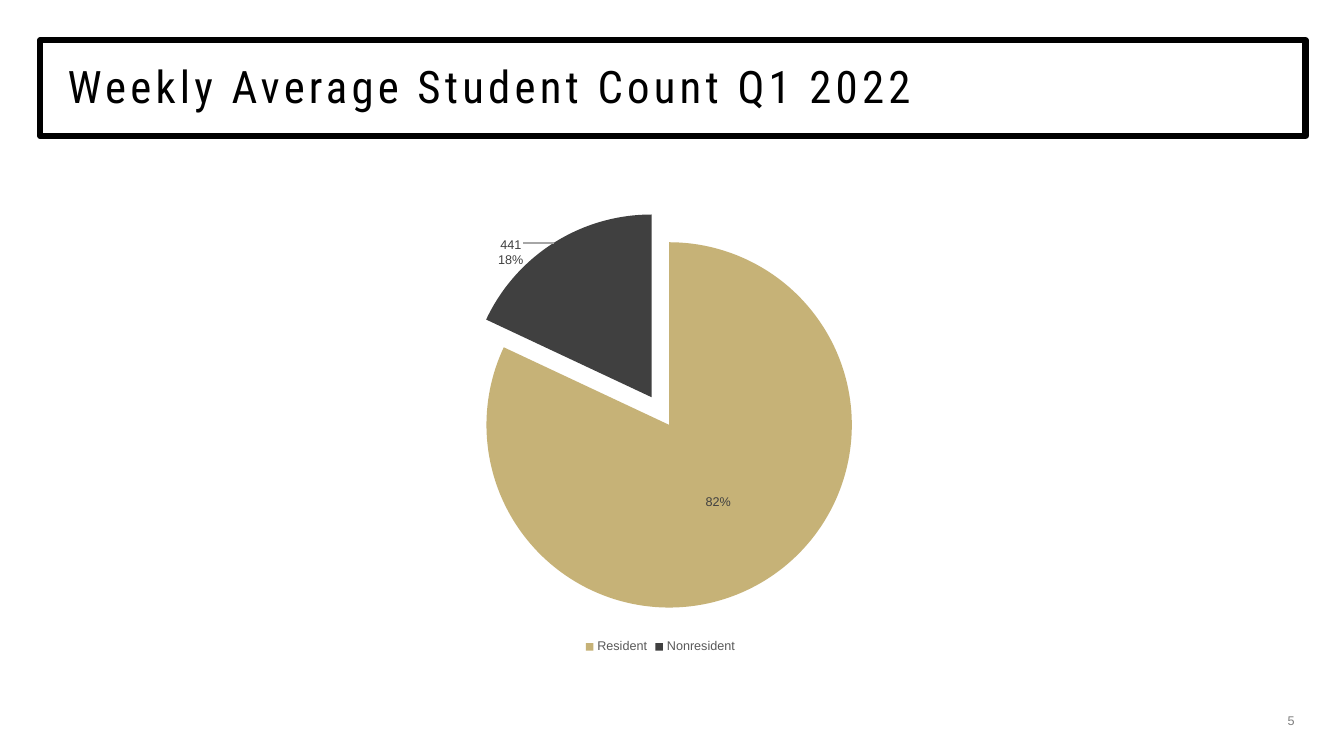
from lxml import etree
from pptx import Presentation
from pptx.chart.data import CategoryChartData as ChartData
from pptx.dml.color import RGBColor as RGB
from pptx.enum.chart import XL_CHART_TYPE as Kind
from pptx.enum.chart import XL_LABEL_POSITION as Spot
from pptx.enum.chart import XL_LEGEND_POSITION as Side
from pptx.enum.text import MSO_ANCHOR as Anchor
from pptx.enum.text import PP_ALIGN as Align
from pptx.oxml import parse_xml
from pptx.oxml.ns import nsdecls, qn
from pptx.util import Inches, Pt

COLORS = {"ink": "000000", "gold": "C6B277", "dark": "404040",
          "legend": "595959", "page": "7F7F7F", "leader": "A6A6A6"}


def color(name):
    return RGB.from_string(COLORS[name])


def style(font, size, name, face="Arial"):
    font.size = Pt(size)
    font.name = face
    font.color.rgb = color(name)


def write(slide, box, text):
    """Add a middle-anchored text box; return its frame and paragraph."""
    frame = slide.shapes.add_textbox(*map(Inches, box)).text_frame
    frame.word_wrap = True
    frame.vertical_anchor = Anchor.MIDDLE
    para = frame.paragraphs[0]
    para.text = text
    return frame, para


def add_title(slide, box, text):
    left, top, width, height = box
    rect = slide.shapes.add_shape(1, *map(Inches, box))
    rect.shadow.inherit = False
    rect.fill.background()
    rect.line.color.rgb = color("ink")
    rect.line.width = Pt(4.5)
    frame, para = write(slide, (left + 0.27, top + 0.01, width - 0.53, height), text)
    frame.margin_left = frame.margin_right = 0
    frame.margin_top = frame.margin_bottom = 0
    para.line_spacing = 0.9
    style(para.font, 32, "ink", "Roboto Condensed")
    para.runs[0].font._element.set("spc", "300")


def add_number(slide, box, text):
    para = write(slide, box, text)[1]
    para.alignment = Align.RIGHT
    style(para.font, 9, "page")


def layout(**values):
    """Make a manual chart layout from its settings, in order."""
    node = parse_xml(f"<c:layout {nsdecls('c')}><c:manualLayout/></c:layout>")
    for key, value in values.items():
        etree.SubElement(node[0], qn(f"c:{key}")).set("val", str(value))
    return node


def split(labels):
    """Put the value and the percentage on separate lines."""
    labels.find(qn("c:showPercent")).set("val", "1")
    mark = parse_xml(f"<c:separator {nsdecls('c')}>\n</c:separator>")
    labels.find(qn("c:showBubbleSize")).addnext(mark)


def add_pie(slide, box, counts):
    data = ChartData()
    data.categories = list(counts)
    data.add_series("Series 1", list(counts.values()))
    chart = slide.shapes.add_chart(Kind.PIE, *map(Inches, box), data).chart
    chart.has_title = False
    style(chart.font, 10, "ink")
    chart.has_legend = True
    chart.legend.position = Side.BOTTOM
    chart.legend.include_in_layout = False
    style(chart.legend.font, 9, "legend")

    plot = chart.plots[0]
    plot.vary_by_categories = True
    series = plot.series[0]
    for index, name in enumerate(("gold", "dark")):
        form = series.points[index].format
        form.fill.solid()
        form.fill.fore_color.rgb = color(name)
        form.line.fill.background()
    ser = series._element
    ser.find(qn("c:dPt")).addprevious(
        parse_xml(f'<c:explosion {nsdecls("c")} val="9"/>'))

    moved = series.points[1].data_label
    for label in (series.data_labels, moved):
        label.position = Spot.CENTER
        style(label.font, 9, "dark")
    group = ser.find(qn("c:dLbls"))
    single = group.find(qn("c:dLbl"))
    split(group)
    split(single)
    single.find(qn("c:idx")).addnext(layout(x=-0.074, y=-0.14))
    group.find(qn("c:showLeaderLines")).addnext(parse_xml(
        f'<c:leaderLines {nsdecls("c", "a")}><c:spPr><a:ln w="9525"><a:solidFill>'
        f'<a:srgbClr val="{COLORS["leader"]}"/></a:solidFill></a:ln></c:spPr>'
        '</c:leaderLines>'))

    area = plot._element.getparent()
    for old in area.findall(qn("c:layout")):
        area.remove(old)
    area.insert(0, layout(layoutTarget="inner", xMode="edge", yMode="edge",
                          x=0.05, y=0.07, w=0.9, h=0.83))


def main():
    deck = Presentation()
    deck.slide_width, deck.slide_height = Inches(13.33), Inches(7.5)
    slide = deck.slides.add_slide(deck.slide_layouts[6])
    add_title(slide, (0.4, 0.4, 12.55, 0.95), "Weekly Average Student Count Q1 2022")
    add_pie(slide, (0.4, 1.77, 12.3, 4.76), {"Resident": 2007, "Nonresident": 441})
    add_number(slide, (12.18, 7.01, 0.76, 0.27), "5")
    deck.save("out.pptx")


if __name__ == "__main__":
    main()
